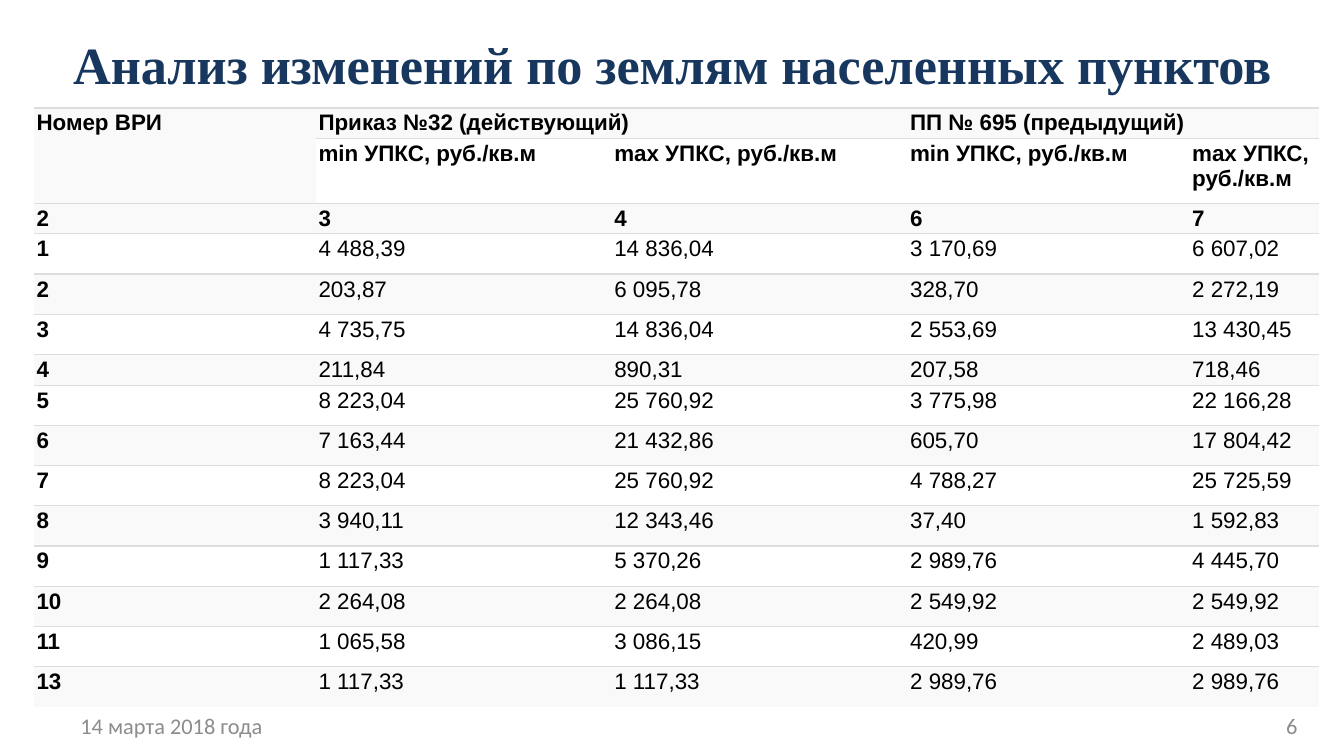
import pptx
import pptx.dml.color
import pptx.enum.text
import pptx.util
import lxml.etree
from dataclasses import dataclass

Cm = pptx.util.Cm
ALIGN = pptx.enum.text.PP_ALIGN
MIDDLE = pptx.enum.text.MSO_ANCHOR.MIDDLE


@dataclass
class Theme:
    title: str = "17375E"
    text: str = "000000"
    footer: str = "8C8C8C"
    rule: str = "DDDDDD"
    band: str = "F9F9F9"
    plain: str = "FFFFFF"
    title_size: int = 28
    text_size: int = 12


theme = Theme()


def style(paragraph, font, size, color, bold=False):
    for run in paragraph.runs:
        run.font.name = font
        run.font.size = pptx.util.Pt(size)
        run.font.bold = bold
        run.font.color.rgb = pptx.dml.color.RGBColor.from_string(color)


def border(cell, side, color=None):
    props = cell._tc.get_or_add_tcPr()
    line = lxml.etree.SubElement(props, pptx.oxml.ns.qn(f"a:{side}"), w="9525")
    if color is None:
        lxml.etree.SubElement(line, pptx.oxml.ns.qn("a:noFill"))
    else:
        fill = lxml.etree.SubElement(line, pptx.oxml.ns.qn("a:solidFill"))
        lxml.etree.SubElement(fill, pptx.oxml.ns.qn("a:srgbClr"), val=color)


presentation = pptx.Presentation()
presentation.slide_width = Cm(25.4)
presentation.slide_height = Cm(14.29)
slide = presentation.slides.add_slide(presentation.slide_layouts[5])

# Title
title = slide.shapes.title
title.left, title.top, title.width, title.height = Cm(0.64), Cm(0.38), Cm(24.13), Cm(1.65)
title.text_frame.text = "Анализ изменений по землям населенных пунктов"
title.text_frame.vertical_anchor = MIDDLE
title.text_frame.paragraphs[0].alignment = ALIGN.CENTER
style(title.text_frame.paragraphs[0], "Times New Roman", theme.title_size, theme.title, True)

# Table content: two header rows, a row of column numbers, then the values
min_label, max_label = "min УПКС, руб./кв.м", "max УПКС, руб./кв.м"
rows = [
    ["Номер ВРИ", "Приказ №32 (действующий)", "", "ПП № 695 (предыдущий)", ""],
    ["", min_label, max_label, min_label, max_label],
    ["2", "3", "4", "6", "7"],
    ["1", "4 488,39", "14 836,04", "3 170,69", "6 607,02"],
    ["2", "203,87", "6 095,78", "328,70", "2 272,19"],
    ["3", "4 735,75", "14 836,04", "2 553,69", "13 430,45"],
    ["4", "211,84", "890,31", "207,58", "718,46"],
    ["5", "8 223,04", "25 760,92", "3 775,98", "22 166,28"],
    ["6", "7 163,44", "21 432,86", "605,70", "17 804,42"],
    ["7", "8 223,04", "25 760,92", "4 788,27", "25 725,59"],
    ["8", "3 940,11", "12 343,46", "37,40", "1 592,83"],
    ["9", "1 117,33", "5 370,26", "2 989,76", "4 445,70"],
    ["10", "2 264,08", "2 264,08", "2 549,92", "2 549,92"],
    ["11", "1 065,58", "3 086,15", "420,99", "2 489,03"],
    ["13", "1 117,33", "1 117,33", "2 989,76", "2 989,76"],
]
header_rows = 3
column_widths = [5.33, 5.59, 5.59, 5.33, 2.44]
special_heights = {0: 0.58, 1: 1.22, 2: 0.58, 6: 0.58}
row_heights = [special_heights.get(index, 0.76) for index in range(len(rows))]

# Table grid
prices = slide.shapes.add_table(
    len(rows), len(column_widths), Cm(0.64), Cm(2.04),
    Cm(sum(column_widths)), Cm(sum(row_heights))).table
for column, width in zip(prices.columns, column_widths):
    column.width = Cm(width)
for row, height in zip(prices.rows, row_heights):
    row.height = Cm(height)
prices.cell(0, 0).merge(prices.cell(1, 0))
prices.cell(0, 1).merge(prices.cell(0, 2))
prices.cell(0, 3).merge(prices.cell(0, 4))

# Table cells
for r, values in enumerate(rows):
    for c, value in enumerate(values):
        cell = prices.cell(r, c)
        if cell.is_spanned:
            continue
        cell.margin_left = cell.margin_right = cell.margin_top = cell.margin_bottom = Cm(0.05)
        border(cell, "lnL")
        border(cell, "lnR")
        border(cell, "lnT", theme.rule)
        border(cell, "lnB", theme.rule if r < len(rows) - 1 else None)
        cell.fill.solid()
        cell.fill.fore_color.rgb = pptx.dml.color.RGBColor.from_string(
            theme.plain if r % 2 else theme.band)
        cell.text_frame.text = value
        style(cell.text_frame.paragraphs[0], "Arial", theme.text_size, theme.text,
              r < header_rows or c == 0)

# Footer: date and page number
for text, left, width, alignment in [
    ("14 марта 2018 года", 1.27, 4.83, ALIGN.LEFT),
    ("6", 22.1, 2.67, ALIGN.RIGHT),
]:
    footer = slide.shapes.add_textbox(Cm(left), Cm(13.44), Cm(width), Cm(0.56)).text_frame
    footer.word_wrap = True
    footer.vertical_anchor = MIDDLE
    footer.text = text
    footer.paragraphs[0].alignment = alignment
    style(footer.paragraphs[0], "Calibri", theme.text_size, theme.footer)

presentation.save("out.pptx")
